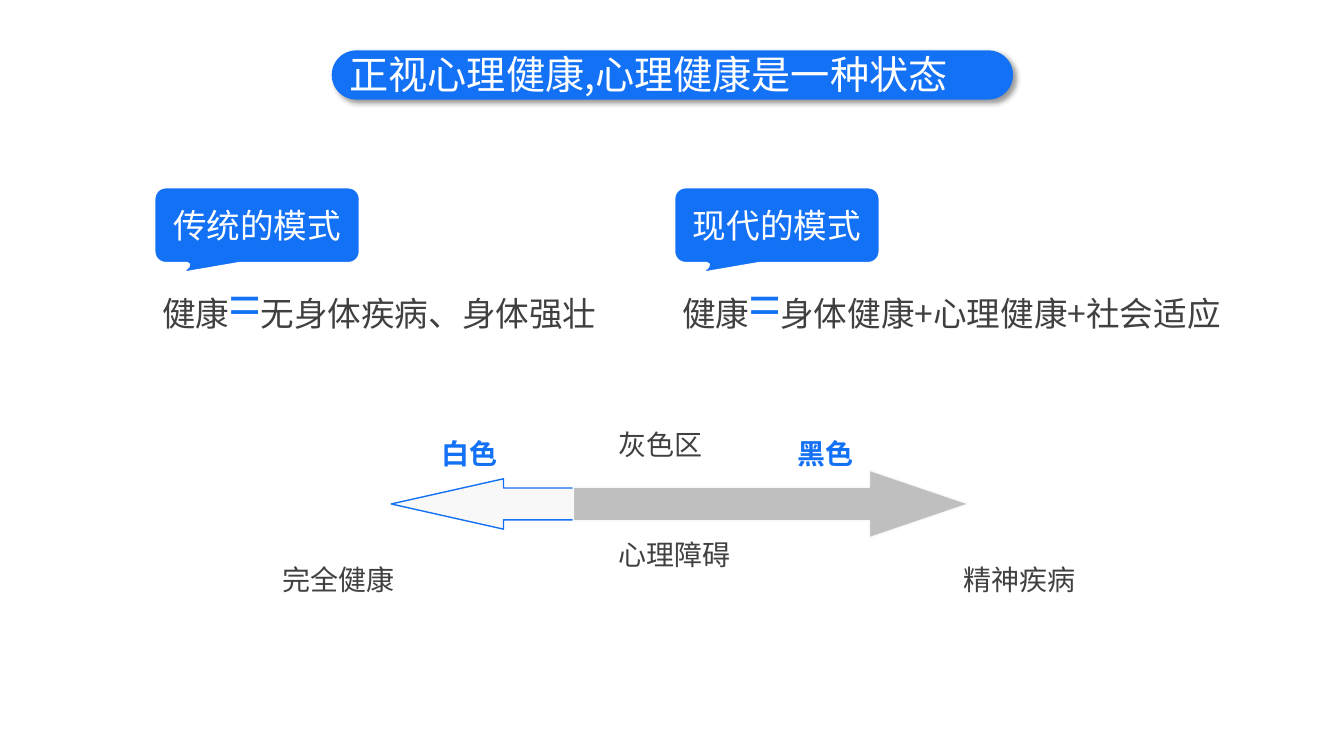
from dataclasses import dataclass

from lxml import etree
from pptx import Presentation
from pptx.dml.color import RGBColor
from pptx.enum.shapes import MSO_SHAPE
from pptx.enum.text import MSO_ANCHOR, PP_ALIGN
from pptx.oxml import parse_xml
from pptx.oxml.ns import nsdecls, qn
from pptx.util import Cm, Pt

BAR = MSO_SHAPE.ROUNDED_RECTANGLE
CALLOUT = MSO_SHAPE.ROUNDED_RECTANGULAR_CALLOUT
LEFT_ARROW, RIGHT_ARROW = MSO_SHAPE.LEFT_ARROW, MSO_SHAPE.RIGHT_ARROW
LEFT, CENTER, JUSTIFY = PP_ALIGN.LEFT, PP_ALIGN.CENTER, PP_ALIGN.JUSTIFY
MIDDLE = MSO_ANCHOR.MIDDLE


@dataclass(frozen=True)
class Theme:
    """Fonts, colours and type sizes of the slide."""
    font: str = "Noto Sans CJK SC"
    blue: str = "1371F6"
    white: str = "FFFFFF"
    pale: str = "F8F8F8"
    grey: str = "BFBFBF"
    text: str = "404040"
    title: int = 28
    body: int = 24
    label: int = 20
    sign: int = 40


T = Theme()


def add_run(p, text, size=T.body, color=T.text, bold=False):
    """Append a formatted run to a paragraph."""
    r = p.add_run()
    r.text = text
    r.font.name = T.font
    r.font.size = Pt(size)
    r.font.bold = bold
    r.font.color.rgb = RGBColor.from_string(color)
    ea = etree.SubElement(r.font._element, qn("a:ea"))
    ea.set("typeface", T.font)


def add_text(slide, x, y, w, h, runs, wrap=True, align=LEFT):
    """Place a text box holding one paragraph of (text, format) runs."""
    tf = slide.shapes.add_textbox(Cm(x), Cm(y), Cm(w), Cm(h)).text_frame
    tf.word_wrap = wrap
    p = tf.paragraphs[0]
    p.alignment = align
    for text, fmt in runs:
        add_run(p, text, **fmt)


def add_block(slide, kind, x, y, w, h, fill, adjust, line=None, width=1):
    """Place a filled preset shape."""
    sp = slide.shapes.add_shape(kind, Cm(x), Cm(y), Cm(w), Cm(h))
    sp.shadow.inherit = False
    for i, value in enumerate(adjust):
        sp.adjustments[i] = value
    sp.fill.solid()
    sp.fill.fore_color.rgb = RGBColor.from_string(fill)
    if line:
        sp.line.color.rgb = RGBColor.from_string(line)
        sp.line.width = Pt(width)
    else:
        sp.line.fill.background()
    return sp


def add_title(slide, x, y, w, h, text):
    """Draw the title bar with its soft shadow and its text."""
    sp = add_block(slide, BAR, x, y, w, h, T.blue, [0.5])
    effects = sp._element.spPr.find(qn("a:effectLst"))
    effects.append(parse_xml(
        f'<a:outerShdw {nsdecls("a")} blurRad="{Pt(4)}" dist="{Pt(3)}" '
        'dir="2700000" algn="tl" rotWithShape="0"><a:srgbClr val="000000">'
        '<a:alpha val="40000"/></a:srgbClr></a:outerShdw>'))
    add_text(slide, x + 0.2, y - 0.13, w - 0.4, h + 0.21,
             [(text, dict(size=T.title, color=T.white))], align=JUSTIFY)


def add_model(slide, x, y, w, name, meaning):
    """Draw a callout naming a model above its equation."""
    call_w, call_h = 5.28, 2.01
    sp = add_block(slide, CALLOUT, x, y, call_w, call_h, T.blue,
                   [-0.388, 0.638, 0.167], T.white, 4.5)
    tf = sp.text_frame
    tf.word_wrap = True
    tf.vertical_anchor = MIDDLE
    p = tf.paragraphs[0]
    p.alignment = CENTER
    add_run(p, name, color=T.white)
    add_text(slide, x, y + call_h, w, 1.96, [
        ("健康", {}), ("=", dict(size=T.sign, color=T.blue)), (meaning, {})])


def add_scale(slide, x, y):
    """Draw the two-way arrow from health to illness with its labels."""
    arrows = [
        (LEFT_ARROW, 2.98, 10.16, 1.27, T.pale, [0.632, 2.229], T.blue),
        (RIGHT_ARROW, 7.57, 9.96, 1.7, T.grey, [0.5, 1.469], T.pale),
    ]
    axis = y + 2.06
    for kind, dx, w, h, fill, adjust, line in arrows:
        add_block(slide, kind, x + dx, axis - h / 2, w, h, fill, adjust, line)
    plain = dict(size=T.label)
    strong = dict(size=T.label, color=T.blue, bold=True)
    labels = [
        ("完全健康", 0, 3.41, plain),
        ("精神疾病", 17.15, 3.41, plain),
        ("灰色区", 8.46, 0, plain),
        ("心理障碍", 8.46, 2.77, plain),
        ("白色", 3.99, 0.23, strong),
        ("黑色", 12.97, 0.23, strong),
    ]
    for text, dx, dy, fmt in labels:
        w = 0.51 + 0.71 * len(text)
        add_text(slide, x + dx, y + dy, w, 1.12, [(text, fmt)], wrap=False)


def main():
    """Build and save the slide."""
    prs = Presentation()
    prs.slide_width, prs.slide_height = Cm(33.87), Cm(19.05)
    slide = prs.slides.add_slide(prs.slide_layouts[6])
    add_model(slide, 3.84, 4.67, 16.76, "传统的模式", "无身体疾病、身体强壮")
    add_model(slide, 16.94, 4.67, 15.19, "现代的模式", "身体健康+心理健康+社会适应")
    add_scale(slide, 6.88, 10.64)
    add_title(slide, 8.36, 1.27, 17.17, 1.24, "正视心理健康,心理健康是一种状态")
    prs.save("out.pptx")


if __name__ == "__main__":
    main()
